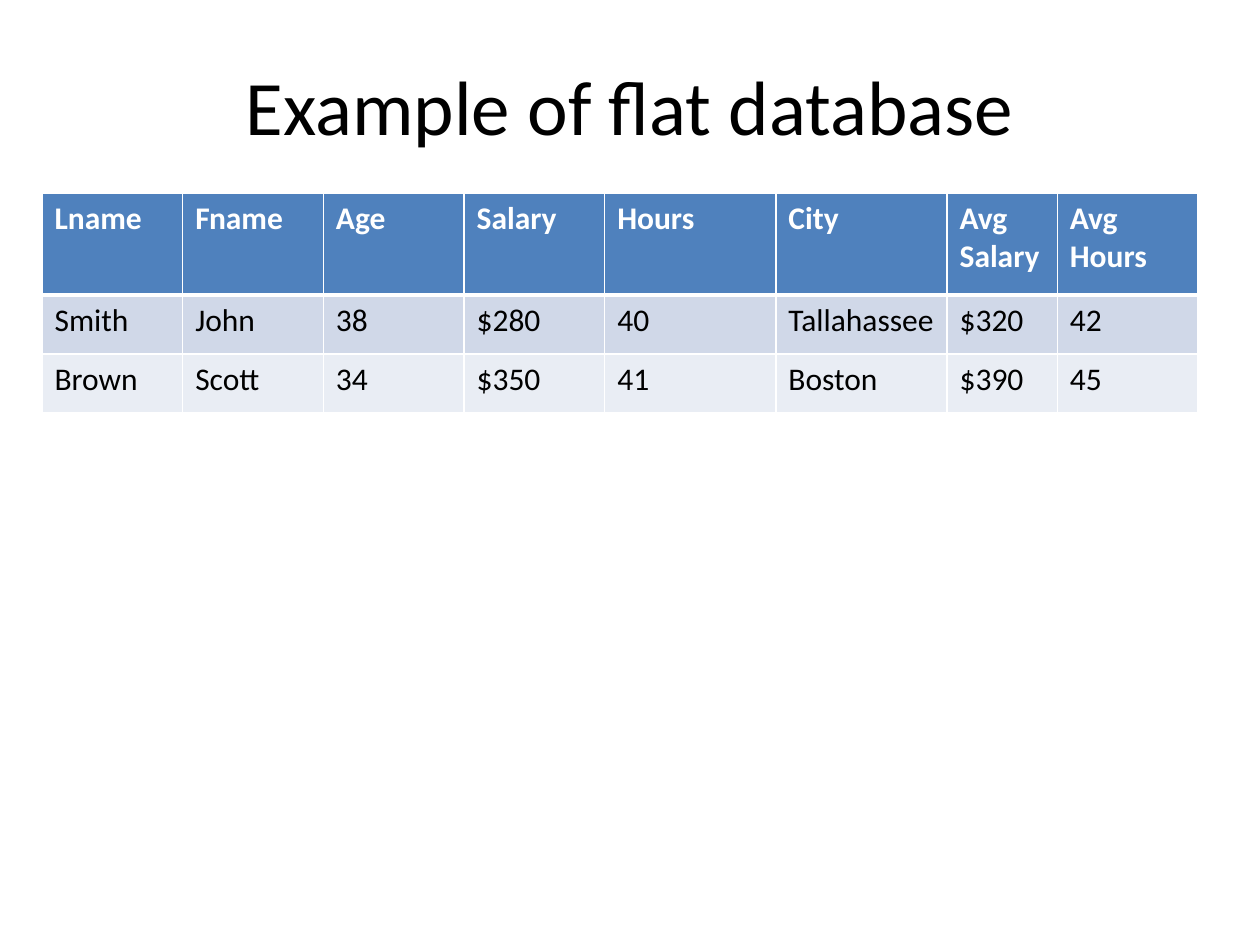
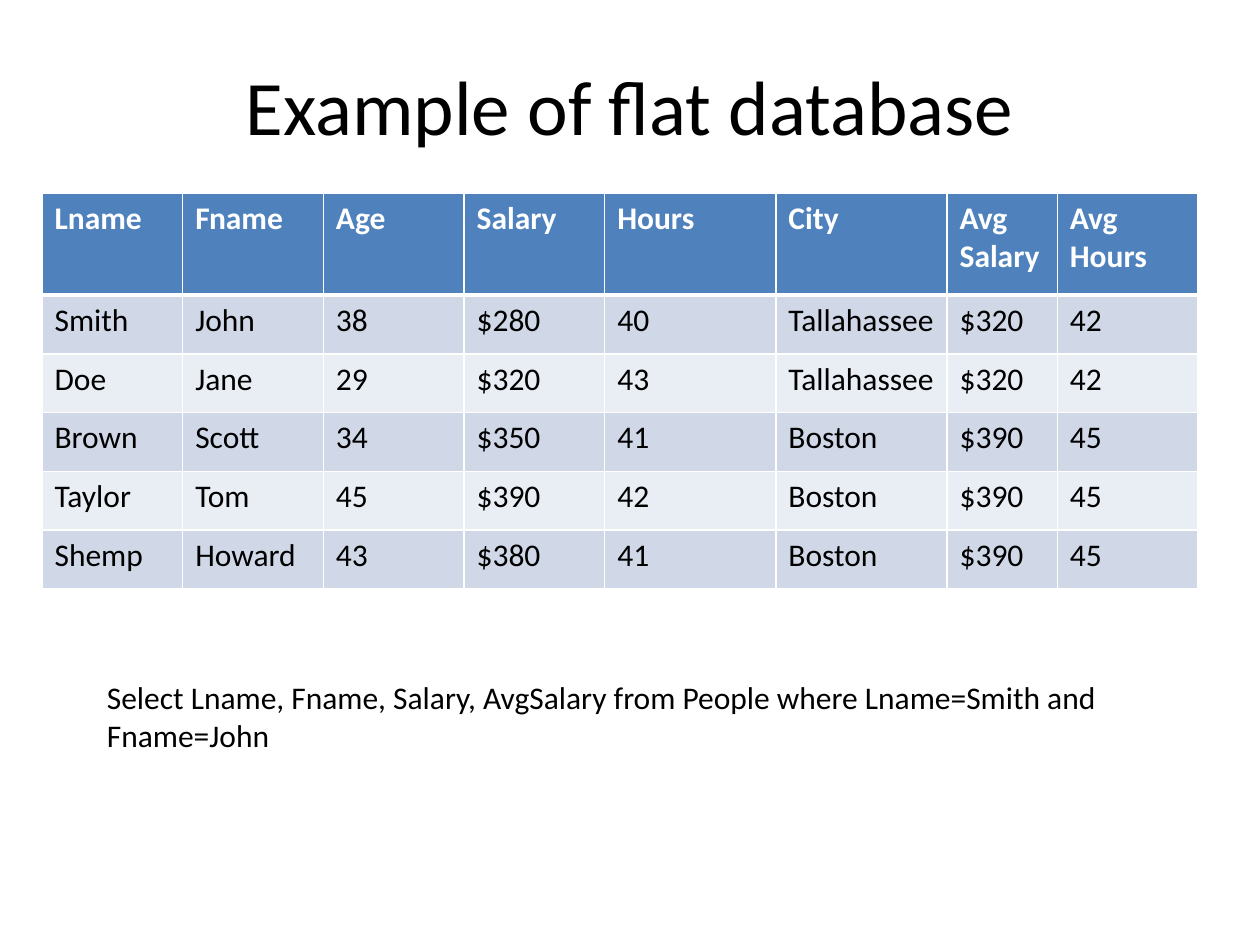
import pptx
import pptx.dml.color
import pptx.enum.text
import pptx.oxml
import pptx.oxml.ns
import pptx.util

PX = 7620
FONT = "Calibri"
BLACK = pptx.dml.color.RGBColor(0x00, 0x00, 0x00)
WHITE = pptx.dml.color.RGBColor(0xFF, 0xFF, 0xFF)
HEADER_BLUE = pptx.dml.color.RGBColor(0x4F, 0x81, 0xBD)
BANDS = (
    pptx.dml.color.RGBColor(0xD0, 0xD8, 0xE8),
    pptx.dml.color.RGBColor(0xE9, 0xED, 0xF4),
)

TITLE = "Example of flat database"
QUERY = (
    "Select Lname, Fname, Salary, AvgSalary from People "
    "where Lname=Smith and Fname=John"
)
COLUMN_WIDTHS = (134, 134, 134, 134, 163, 163, 105, 134)
HEADER_HEIGHT = 97
ROW_HEIGHT = 56

HEADINGS = ("Lname", "Fname", "Age", "Salary", "Hours", "City")
SMITH = ("Smith", "John", "38", "$280", "40")
DOE = ("Doe", "Jane", "29", "$320", "43")
BROWN = ("Brown", "Scott", "34", "$350", "41")
TAYLOR = ("Taylor", "Tom", "45", "$390", "42")
SHEMP = ("Shemp", "Howard", "43", "$380", "41")
TALLAHASSEE = ("Tallahassee", "$320", "42")
BOSTON = ("Boston", "$390", "45")


def px(*lengths):
    return [pptx.util.Emu(length * PX) for length in lengths]


def style_text(frame, size, color, bold=False):
    for para in frame.paragraphs:
        para.font.name = FONT
        para.font.size = pptx.util.Pt(size)
        para.font.color.rgb = color
        para.font.bold = bold


def add_page(deck):
    page = deck.slides.add_slide(deck.slide_layouts[0])
    subtitle = page.placeholders[1].element
    subtitle.getparent().remove(subtitle)
    title = page.shapes.title
    title.left, title.top, title.width, title.height = px(90, 40, 1020, 120)
    frame = title.text_frame
    frame.text = TITLE
    frame.vertical_anchor = pptx.enum.text.MSO_ANCHOR.MIDDLE
    frame.paragraphs[0].alignment = pptx.enum.text.PP_ALIGN.CENTER
    style_text(frame, 44, BLACK)
    return page


def set_borders(cell, top, bottom):
    properties = cell._tc.get_or_add_tcPr()
    for side, points in (("L", 1), ("R", 1), ("T", top), ("B", bottom)):
        properties.append(pptx.oxml.parse_xml(
            f'<a:ln{side} {pptx.oxml.ns.nsdecls("a")} w="{pptx.util.Pt(points)}">'
            f'<a:solidFill><a:srgbClr val="{WHITE}"/></a:solidFill></a:ln{side}>'
        ))


def fill_cell(cell, text, row_index):
    is_header = row_index == 0
    cell.text = text
    style_text(cell.text_frame, 18, WHITE if is_header else BLACK, is_header)
    set_borders(cell, 3 if row_index == 1 else 1, 3 if is_header else 1)
    cell.fill.solid()
    cell.fill.fore_color.rgb = HEADER_BLUE if is_header else BANDS[(row_index - 1) % 2]


def add_people_table(page, rows):
    heights = [HEADER_HEIGHT] + [ROW_HEIGHT] * (len(rows) - 1)
    table = page.shapes.add_table(
        len(rows), len(COLUMN_WIDTHS),
        *px(40, 184, sum(COLUMN_WIDTHS), sum(heights)),
    ).table
    for column, width in zip(table.columns, px(*COLUMN_WIDTHS)):
        column.width = width
    for row, height in zip(table.rows, px(*heights)):
        row.height = height
    for row_index, values in enumerate(rows):
        for column_index, text in enumerate(values):
            fill_cell(table.cell(row_index, column_index), text, row_index)


def add_query(page):
    box = page.shapes.add_textbox(*px(90, 640, 1060, 85))
    frame = box.text_frame
    frame.word_wrap = True
    frame.text = QUERY
    style_text(frame, 18, BLACK)


def main():
    deck = pptx.Presentation()
    deck.slide_width, deck.slide_height = px(1200, 900)

    page = add_page(deck)
    add_people_table(page, [
        HEADINGS + ("Avg Salary", "Avg\nHours"),
        SMITH + TALLAHASSEE,
        BROWN + BOSTON,
    ])

    page = add_page(deck)
    add_people_table(page, [
        HEADINGS + ("Avg\nSalary", "Avg\nHours"),
        SMITH + TALLAHASSEE,
        DOE + TALLAHASSEE,
        BROWN + BOSTON,
        TAYLOR + BOSTON,
        SHEMP + BOSTON,
    ])
    add_query(page)

    deck.save("out.pptx")


if __name__ == "__main__":
    main()
